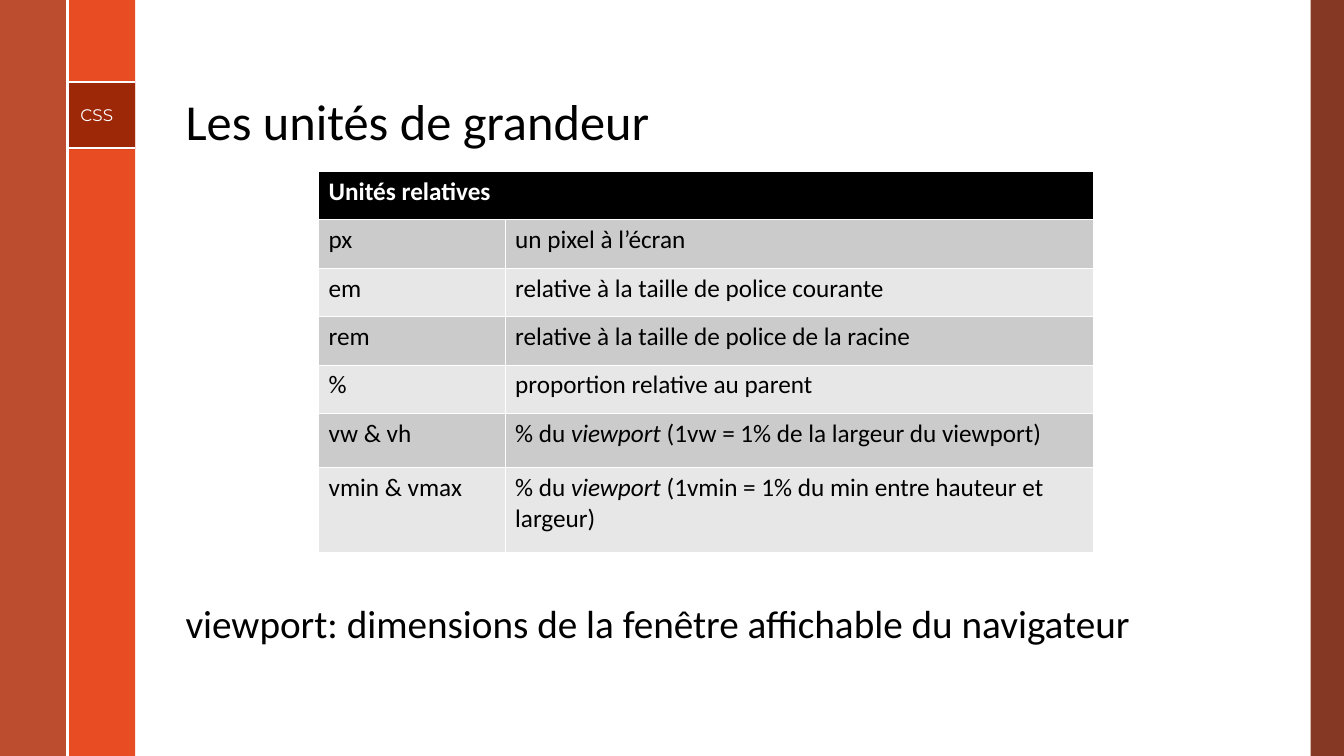
import pptx
import pptx.util
import pptx.dml.color
import pptx.enum.shapes
import pptx.enum.text
import pptx.oxml
import pptx.oxml.ns
import lxml.etree

Inches = pptx.util.Inches
Pt = pptx.util.Pt
qn = pptx.oxml.ns.qn
sub = lxml.etree.SubElement


def paint(fill, shade, alpha=100):
    """Fill with a hex colour, alpha in percent."""
    fill.solid()
    fill.fore_color.rgb = pptx.dml.color.RGBColor.from_string(shade)
    if alpha < 100:
        tone = fill._xPr.find(qn("a:solidFill"))[0]
        sub(tone, qn("a:alpha"), val=str(alpha * 1000))


def write(para, text, shade, **form):
    """Add text as runs; parts between asterisks are italic."""
    for place, part in enumerate(text.split("*")):
        run = para.add_run()
        run.text = part
        paint(run.font.fill, shade)
        for key, value in {"name": "Calibri", "italic": place % 2 == 1, **form}.items():
            setattr(run.font, key, value)


deck = pptx.Presentation()
deck.slide_width, deck.slide_height = Inches(13.33), Inches(7.5)
slide = deck.slides.add_slide(deck.slide_layouts[1])
shapes = slide.shapes

# Side bars and badge
bars = [
    (13, 0, 0.33, 7.5, "78230D", 90),
    (0.67, 0, 0.67, 7.5, "E84C22", 100),
    (0, 0, 0.67, 7.5, "B53513", 88),
    (0.67, 0.81, 0.67, 0.67, "851D00", 75),
]
for *area, shade, alpha in bars:
    bar = shapes.add_shape(pptx.enum.shapes.MSO_SHAPE.RECTANGLE, *map(Inches, area))
    bar.shadow.inherit = False
    bar.line.fill.background()
    paint(bar.fill, shade, alpha)

for ends in [(0.67, 0.81, 1.34, 0.81), (0.67, 1.47, 1.34, 1.47), (0.67, 0, 0.67, 7.5)]:
    rule = shapes.add_connector(pptx.enum.shapes.MSO_CONNECTOR.STRAIGHT, *map(Inches, ends))
    paint(rule.line.fill, "FFFFFF")
    rule.line.width = Pt(1.5)
    sub(rule._element.spPr, qn("a:effectLst"))

badge = shapes.add_textbox(*map(Inches, (0.7, 0.99, 0.64, 0.31)))
badge.text_frame.word_wrap = True
write(badge.text_frame.paragraphs[0], "CSS", "FFFFFF", name="Montserrat", size=Pt(12))

# Title and closing note
anchor = pptx.enum.text.MSO_ANCHOR
holders = [
    (shapes.title, 0.19, 1.36, anchor.BOTTOM, 36, "Les unités de grandeur"),
    (slide.placeholders[1], 5.95, 0.71, anchor.TOP, 28,
     "viewport: dimensions de la fenêtre affichable du navigateur"),
]
for holder, top, height, side, size, text in holders:
    place = {"left": 1.74, "top": top, "width": 10.7, "height": height}
    for key, value in place.items():
        setattr(holder, key, Inches(value))
    frame = holder.text_frame
    frame.auto_size = pptx.enum.text.MSO_AUTO_SIZE.NONE
    frame.vertical_anchor = side
    para = frame.paragraphs[0]
    props = para._p.get_or_add_pPr()
    props.set("marL", "0")
    props.set("indent", "0")
    sub(props, qn("a:buNone"))
    form = {"alignment": pptx.enum.text.PP_ALIGN.LEFT, "line_spacing": 0.9, "space_before": Pt(0)}
    for key, value in form.items():
        setattr(para, key, value)
    write(para, text, "000000", size=Pt(size))

# Table of units
units = [
    ("Unités relatives", ""),
    ("px", "un pixel à l’écran"),
    ("em", "relative à la taille de police courante"),
    ("rem", "relative à la taille de police de la racine"),
    ("%", "proportion relative au parent"),
    ("vw & vh", "% du *viewport* (1vw = 1% de la largeur du viewport)"),
    ("vmin & vmax", "% du *viewport* (1vmin = 1% du min entre hauteur et largeur)"),
]
heights = [0.48] * 5 + [0.54, 0.84]
table = shapes.add_table(len(units), 2, *map(Inches, (3.16, 1.7, 7.68, 3.78))).table
for column, width in zip(table.columns, (1.85, 5.83)):
    column.width = Inches(width)
table.cell(0, 0).merge(table.cell(0, 1))

for level, (row, texts) in enumerate(zip(table.rows, units)):
    row.height = Inches(heights[level])
    head = level == 0
    shade = "000000" if head else ("E7E7E7", "CBCBCB")[level % 2]
    for cell, text in zip(row.cells, texts):
        props = cell._tc.get_or_add_tcPr()
        for edge in ("a:lnL", "a:lnR", "a:lnT", "a:lnB"):
            line = sub(props, qn(edge), w=str(Pt(0.6)))
            sub(sub(line, qn("a:solidFill")), qn("a:srgbClr"), val="FFFFFF")
        paint(cell.fill, shade)
        if text:
            write(cell.text_frame.paragraphs[0], text, "FFFFFF" if head else "000000",
                  size=Pt(18), bold=head)

deck.save("out.pptx")
